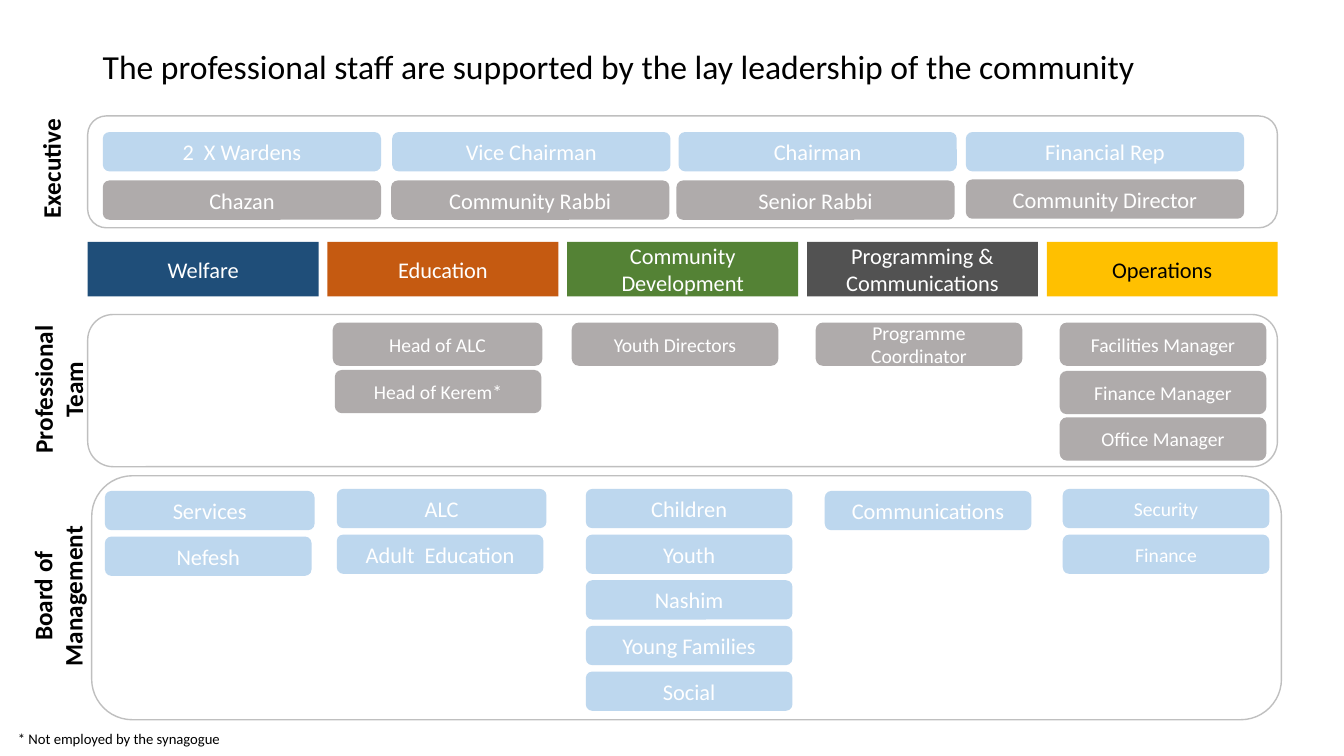
from pptx import Presentation
from pptx.dml.color import RGBColor
from pptx.enum.shapes import MSO_SHAPE
from pptx.enum.text import MSO_ANCHOR, PP_ALIGN
from pptx.util import Inches, Pt

RECT, ROUND = MSO_SHAPE.RECTANGLE, MSO_SHAPE.ROUNDED_RECTANGLE
TOP, MIDDLE = MSO_ANCHOR.TOP, MSO_ANCHOR.MIDDLE
LEFT, CENTER = PP_ALIGN.LEFT, PP_ALIGN.CENTER

BLACK = RGBColor(0x00, 0x00, 0x00)
WHITE = RGBColor(0xFF, 0xFF, 0xFF)
LAY = RGBColor(0xBD, 0xD7, 0xEE)
STAFF = RGBColor(0xAF, 0xAB, 0xAB)
BORDER = RGBColor(0xBF, 0xBF, 0xBF)
NAVY = RGBColor(0x1F, 0x4E, 0x79)
ORANGE = RGBColor(0xC5, 0x5A, 0x11)
GREEN = RGBColor(0x54, 0x82, 0x35)
GREY = RGBColor(0x52, 0x52, 0x52)
GOLD = RGBColor(0xFF, 0xC0, 0x00)

deck = Presentation()
deck.slide_width, deck.slide_height = Inches(13.33), Inches(7.5)
slide = deck.slides.add_slide(deck.slide_layouts[6])


def write(shape, text, size, color, align=CENTER, anchor=MIDDLE, wrap=True, bold=False):
    frame = shape.text_frame
    frame.word_wrap = wrap
    frame.vertical_anchor = anchor
    frame.text = text
    look = {"name": "Calibri", "size": Pt(size), "bold": bold}
    for para in frame.paragraphs:
        para.alignment = align
        for key, value in look.items():
            setattr(para.font, key, value)
        para.font.color.rgb = color


def draw(kind, left, top, width, height, fill=None):
    shape = slide.shapes.add_shape(
        kind, Inches(left), Inches(top), Inches(width), Inches(height))
    shape.shadow.inherit = False
    if fill is None:
        shape.fill.background()
        shape.line.color.rgb = BORDER
        shape.line.width = Pt(1)
    else:
        shape.fill.solid()
        shape.fill.fore_color.rgb = fill
        shape.line.fill.background()
    return shape


# Panels behind each level
for left, top, height in [(0.87, 1.15, 1.11), (0.87, 3.12, 1.51), (0.91, 4.72, 2.42)]:
    draw(ROUND, left, top, 11.8, height)

# Executive: lay leaders above staff
leaders = [
    (1.02, 1.31, "2  X Wardens", LAY),
    (3.89, 1.31, "Vice Chairman", LAY),
    (6.73, 1.31, "Chairman", LAY),
    (9.58, 1.31, "Financial Rep", LAY),
    (1.02, 1.79, "Chazan", STAFF),
    (3.88, 1.79, "Community Rabbi", STAFF),
    (6.71, 1.79, "Senior Rabbi", STAFF),
    (9.58, 1.78, "Community Director", STAFF),
]
for left, top, text, fill in leaders:
    write(draw(ROUND, left, top, 2.76, 0.39, fill), text, 16, WHITE)

# Department headings
areas = [
    ("Welfare", NAVY, WHITE),
    ("Education", ORANGE, WHITE),
    ("Community Development", GREEN, WHITE),
    ("Programming & Communications", GREY, WHITE),
    ("Operations", GOLD, BLACK),
]
for col, (text, fill, color) in enumerate(areas):
    write(draw(RECT, 0.87 + col * 2.378, 2.4, 2.29, 0.54, fill), text, 16, color)

# Professional team
team = [
    (3.3, 3.2, 2.08, "Head of ALC"),
    (3.32, 3.67, 2.05, "Head of Kerem*"),
    (5.67, 3.2, 2.05, "Youth Directors"),
    (8.09, 3.2, 2.05, "Programme Coordinator"),
    (10.51, 3.2, 2.05, "Facilities Manager"),
    (10.51, 3.68, 2.05, "Finance Manager"),
    (10.51, 4.14, 2.05, "Office Manager"),
]
for left, top, width, text in team:
    write(draw(ROUND, left, top, width, 0.43, STAFF), text, 14, WHITE)

# Board of management: left, top, first width, text size, names
board = [
    (1.04, 4.87, 2.08, 16, ["Services", "Nefesh"]),
    (3.34, 4.85, 2.08, 16, ["ALC", "Adult  Education"]),
    (5.81, 4.85, 2.05, 16, ["Children", "Youth", "Nashim", "Young Families", "Social"]),
    (8.18, 4.87, 2.05, 16, ["Communications"]),
    (10.54, 4.85, 2.05, 14, ["Security", "Finance"]),
]
for left, top, first, size, names in board:
    for row, text in enumerate(names):
        width = 2.05 if row else first
        chip = draw(ROUND, left, top + row * 0.453, width, 0.39, LAY)
        write(chip, text, size, WHITE)

# Title, turned level names and footnote
notes = [
    (0.92, 0.4, 11.5, 0.57, 0,
     "The professional staff are supported by the lay leadership of the community",
     24, LEFT, MIDDLE, True, False),
    (-0.09, 1.47, 1.19, 0.4, 270, "Executive", 18, LEFT, TOP, False, True),
    (-0.19, 3.51, 1.54, 0.71, 270, "Professional\nTeam", 18, CENTER, TOP, False, True),
    (-0.47, 5.56, 2.09, 0.71, 270, "Board of Management", 18, CENTER, TOP, True, True),
    (0.08, 7.19, 2.24, 0.28, 0, "* Not employed by the synagogue",
     10.5, LEFT, TOP, False, False),
]
for left, top, width, height, turn, text, size, align, anchor, wrap, bold in notes:
    label = slide.shapes.add_textbox(
        Inches(left), Inches(top), Inches(width), Inches(height))
    label.rotation = turn
    write(label, text, size, BLACK, align, anchor, wrap, bold)
    if size == 24:
        label.text_frame.paragraphs[0].line_spacing = 0.9

deck.save("out.pptx")
